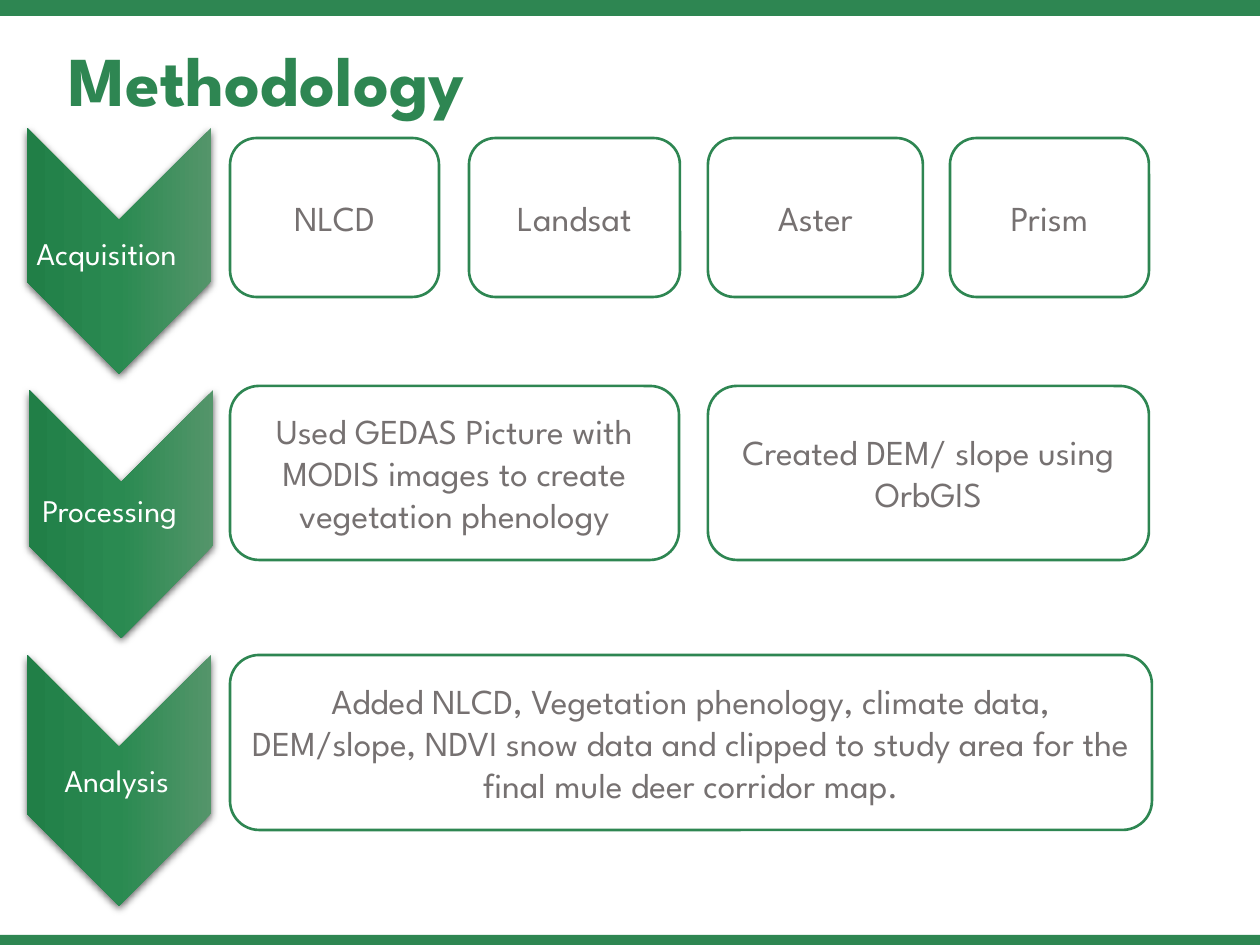
from dataclasses import dataclass

from lxml import etree
from pptx import Presentation
from pptx.dml.color import RGBColor
from pptx.enum.shapes import MSO_SHAPE
from pptx.enum.text import MSO_ANCHOR, MSO_AUTO_SIZE, PP_ALIGN
from pptx.oxml import parse_xml
from pptx.oxml.ns import nsdecls, qn
from pptx.util import Pt

EMU_PER_PX = 914400 / 126
PAGE_WIDTH, PAGE_HEIGHT = 1260, 945

RECTANGLE = MSO_SHAPE.RECTANGLE
ROUNDED = MSO_SHAPE.ROUNDED_RECTANGLE
CHEVRON = MSO_SHAPE.CHEVRON
LEFT, CENTER = PP_ALIGN.LEFT, PP_ALIGN.CENTER
TOP, MIDDLE = MSO_ANCHOR.TOP, MSO_ANCHOR.MIDDLE


@dataclass(frozen=True)
class Theme:
    font: str = "League Spartan"
    green: str = "2E8652"
    white: str = "FFFFFF"
    gray: str = "767171"
    shadow: str = "000000"
    gradient: tuple = ("54956A", "2A8A51", "217F47")
    title_size: int = 40
    box_size: int = 20
    label_size: int = 18
    border: float = 1.5


THEME = Theme()

CARD_LEFT = 230
CARD_RIGHT_HALF = 708
# Each stage: name, label (left, top, width), arrow (left, top, length),
# card row (top, height), cards (left, width, text)
STAGES = [
    ("Acquisition", (24, 228, 193), (27, 128, 246), (138, 159), [
        (CARD_LEFT, 209, "NLCD"),
        (469, 211, "Landsat"),
        (CARD_RIGHT_HALF, 215, "Aster"),
        (950, 199, "Prism"),
    ]),
    ("Processing", (30, 485, 188), (29, 390, 248), (386, 174), [
        (CARD_LEFT, 449, "Used GEDAS Picture with MODIS images to create "
                         "vegetation phenology"),
        (CARD_RIGHT_HALF, 441, "Created DEM/ slope using OrbGIS"),
    ]),
    ("Analysis", (52, 755, 145), (27, 655, 251), (655, 175), [
        (CARD_LEFT, 922, "Added NLCD, Vegetation phenology, climate data, "
                         "DEM/slope, NDVI snow data and clipped to study area "
                         "for the final mule deer corridor map."),
    ]),
]
ARROW_WIDTH = 184
LABEL_HEIGHT = 50


def px(*lengths):
    return [round(length * EMU_PER_PX) for length in lengths]


def color(value):
    return RGBColor.from_string(value)


def write_text(shape, text, *, size, ink, bold=False, align=LEFT, anchor=TOP,
               wrap=True, line_spacing=None, space_before=None):
    frame = shape.text_frame
    frame.word_wrap = wrap
    frame.vertical_anchor = anchor
    para = frame.paragraphs[0]
    para.alignment = align
    para.line_spacing = line_spacing
    para.space_before = space_before
    span = para.add_run()
    span.text = text
    span.font.name = THEME.font
    span.font.size = Pt(size)
    span.font.bold = bold
    span.font.color.rgb = color(ink)


def add_shape(page, kind, area, fill, line=None):
    shape = page.shapes.add_shape(kind, *px(*area))
    shape.shadow.inherit = False
    shape.fill.solid()
    shape.fill.fore_color.rgb = color(fill)
    if line:
        shape.line.color.rgb = color(line)
        shape.line.width = Pt(THEME.border)
    else:
        shape.line.fill.background()
    return shape


def add_card(page, area, text):
    card = add_shape(page, ROUNDED, area, THEME.white, THEME.green)
    write_text(card, text, size=THEME.box_size, ink=THEME.gray,
               align=CENTER, anchor=MIDDLE)


def add_gradient(shape):
    stops = "".join(
        f'<a:gs pos="{index * 50000}"><a:srgbClr val="{value}"/></a:gs>'
        for index, value in enumerate(THEME.gradient))
    gradient = parse_xml(
        f'<a:gradFill {nsdecls("a")} rotWithShape="1"><a:gsLst>{stops}</a:gsLst>'
        '<a:lin ang="5400000" scaled="0"/></a:gradFill>')
    properties = shape.element.spPr
    properties.replace(properties.find(qn("a:solidFill")), gradient)


def add_shadow(shape):
    effects = shape.element.spPr.find(qn("a:effectLst"))
    shadow = etree.SubElement(
        effects, qn("a:outerShdw"), blurRad=str(Pt(4.5)), dist=str(Pt(1.5)),
        dir="5400000", rotWithShape="0")
    tint = etree.SubElement(shadow, qn("a:srgbClr"), val=THEME.shadow)
    etree.SubElement(tint, qn("a:alpha"), val="63000")


def add_down_arrow(page, left, top, length):
    """Place a chevron by the upright area it covers once turned downwards."""
    shift = (length - ARROW_WIDTH) / 2
    area = (left - shift, top + shift, length, ARROW_WIDTH)
    arrow = add_shape(page, CHEVRON, area, THEME.green)
    arrow.rotation = 90
    add_gradient(arrow)
    add_shadow(arrow)


def add_label(page, area, text):
    label = page.shapes.add_textbox(*px(*area))
    write_text(label, text, size=THEME.label_size, ink=THEME.white, wrap=False)
    label.text_frame.auto_size = MSO_AUTO_SIZE.SHAPE_TO_FIT_TEXT


def add_title(page, area, text):
    title = page.shapes.add_textbox(*px(*area))
    write_text(title, text, size=THEME.title_size, ink=THEME.green, bold=True,
               align=CENTER, line_spacing=0.9, space_before=Pt(10))


def main():
    deck = Presentation()
    deck.slide_width, deck.slide_height = px(PAGE_WIDTH, PAGE_HEIGHT)
    page = deck.slides.add_slide(deck.slide_layouts[6])

    for top, height in ((0, 16), (PAGE_HEIGHT - 10, 10)):
        add_shape(page, RECTANGLE, (0, top, PAGE_WIDTH, height), THEME.green)

    for name, label, arrow, (row_top, row_height), cards in STAGES:
        add_down_arrow(page, *arrow)
        add_label(page, (*label, LABEL_HEIGHT), name)
        for left, width, text in cards:
            add_card(page, (left, row_top, width, row_height), text)

    add_title(page, (-261, 40, 1055, 178), "Methodology")
    deck.save("out.pptx")


if __name__ == "__main__":
    main()
